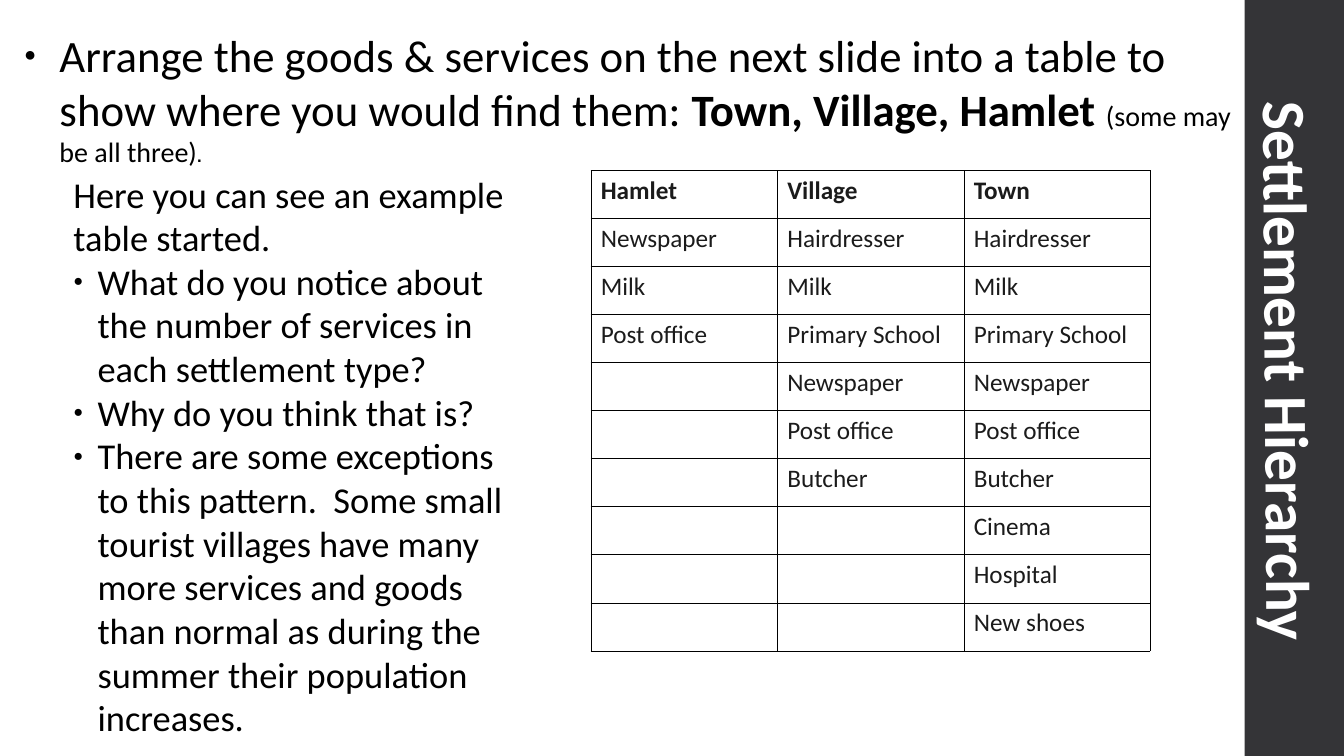
from lxml.etree import SubElement
from pptx import Presentation
from pptx.dml.color import RGBColor
from pptx.enum.shapes import MSO_SHAPE as Shape
from pptx.enum.text import MSO_ANCHOR as Anchor, MSO_AUTO_SIZE as AutoSize, PP_ALIGN as Align
from pptx.oxml.ns import qn
from pptx.util import Pt

WHITE = RGBColor(0xFF, 0xFF, 0xFF)
BLACK = RGBColor(0, 0, 0)
INK = RGBColor(0x1B, 0x1B, 0x1B)
BAND = RGBColor(0x34, 0x34, 0x37)
FONT = "Calibri"

GOODS = {
    "Hamlet": ["Newspaper", "Milk", "Post office"],
    "Village": ["Hairdresser", "Milk", "Primary School", "Newspaper", "Post office", "Butcher"],
    "Town": ["Hairdresser", "Milk", "Primary School", "Newspaper", "Post office", "Butcher",
             "Cinema", "Hospital", "New shoes"],
}
QUESTIONS = [
    "What do you notice about the number of services in each settlement type?",
    "Why do you think that is?",
    "There are some exceptions to this pattern.  Some small tourist villages have many more "
    "services and goods than normal as during the summer their population increases.",
]


def write(para, text, size, color=BLACK, bold=False, font=FONT):
    span = para.add_run()
    span.text = text
    span.font.name = font
    span.font.size = Pt(size)
    span.font.bold = bold
    span.font.color.rgb = color


def format_para(para, margin=0, hang=0, bullet=False):
    """Set the indents in points and switch the bullet on or off."""
    para.space_before = Pt(0)
    props = para._p.get_or_add_pPr()
    props.set("marL", str(Pt(margin)))
    props.set("indent", str(Pt(-hang)))
    if not bullet:
        SubElement(props, qn("a:buNone"))
        return
    SubElement(SubElement(props, qn("a:buClr")), qn("a:srgbClr"), val=str(BLACK))
    SubElement(props, qn("a:buSzPct"), val="45000")
    SubElement(props, qn("a:buFont"), typeface="Arial")
    SubElement(props, qn("a:buChar"), char="●")


def place(holder, box, inset=(7.2, 3.6), anchor=Anchor.TOP):
    """Move a placeholder to box and return its text frame."""
    holder.left, holder.top, holder.width, holder.height = map(Pt, box)
    frame = holder.text_frame
    frame.word_wrap = True
    frame.auto_size = AutoSize.NONE
    frame.vertical_anchor = anchor
    frame.margin_left = frame.margin_right = Pt(inset[0])
    frame.margin_top = frame.margin_bottom = Pt(inset[1])
    return frame


def add_side_title(page, box):
    """Draw the dark band in box, with the title running down its middle."""
    left, top, width, height = box
    title = page.shapes.title
    band = page.shapes.add_shape(Shape.RECTANGLE, *map(Pt, box))
    band.shadow.inherit = False
    band.fill.solid()
    band.fill.fore_color.rgb = BAND
    band.line.fill.background()
    title._element.addprevious(band._element)

    length, depth = 525, 57.6
    center_x, center_y = left + width / 2 - 4, top + height / 2 - 5
    title_box = (center_x - length / 2, center_y - depth / 2, length, depth)
    para = place(title, title_box, (0, 0), Anchor.MIDDLE).paragraphs[0]
    title.rotation = 89.6
    para.alignment = Align.CENTER
    write(para, "Settlement Hierarchy", 44, WHITE, bold=True)


def add_task(holder, box):
    para = place(holder, box).paragraphs[0]
    format_para(para, 33.8, 25.2, bullet=True)
    write(para, "Arrange the goods & services on the next slide into a table to "
                "show where you would find them:", 32)
    write(para, " Town, Village, Hamlet ", 32, bold=True)
    write(para, "(some may be all three)", 20)
    write(para, ".", 12, bold=True, font="Arial")


def add_questions(holder, box):
    frame = place(holder, box)
    intro = frame.paragraphs[0]
    format_para(intro)
    write(intro, "Here you can see an example table started.", 26)
    for question in QUESTIONS:
        para = frame.add_paragraph()
        format_para(para, 17.3, 17.3, bullet=True)
        write(para, question, 26)


def border_cell(cell, width):
    props = cell._tc.get_or_add_tcPr()
    for side in ("lnL", "lnR", "lnT", "lnB"):
        line = SubElement(props, qn(f"a:{side}"), w=str(Pt(width)))
        SubElement(SubElement(line, qn("a:solidFill")), qn("a:srgbClr"), val=str(BLACK))


def add_goods_table(page, box):
    row_count = 1 + max(map(len, GOODS.values()))
    table = page.shapes.add_table(row_count, len(GOODS), *map(Pt, box)).table
    table.first_row = table.horz_banding = False
    for col, (settlement, goods) in enumerate(GOODS.items()):
        entries = [settlement] + goods
        for row in range(row_count):
            cell = table.cell(row, col)
            border_cell(cell, 0.06)
            cell.fill.background()
            if row < len(entries):
                write(cell.text_frame.paragraphs[0], entries[row], 18, INK, bold=row == 0)


def build_slide(deck):
    page = deck.slides.add_slide(deck.slide_layouts[3])
    page.background.fill.solid()
    page.background.fill.fore_color.rgb = WHITE
    add_side_title(page, (889, 0, 72, 540))
    add_task(page.placeholders[1], (1.5, 16, 900, 103))
    add_goods_table(page, (422, 121.5, 399.6, 343.5))
    add_questions(page.placeholders[2], (45.2, 119, 334, 398))


def main():
    deck = Presentation()
    deck.slide_width, deck.slide_height = Pt(960), Pt(540)
    build_slide(deck)
    deck.save("out.pptx")


if __name__ == "__main__":
    main()
